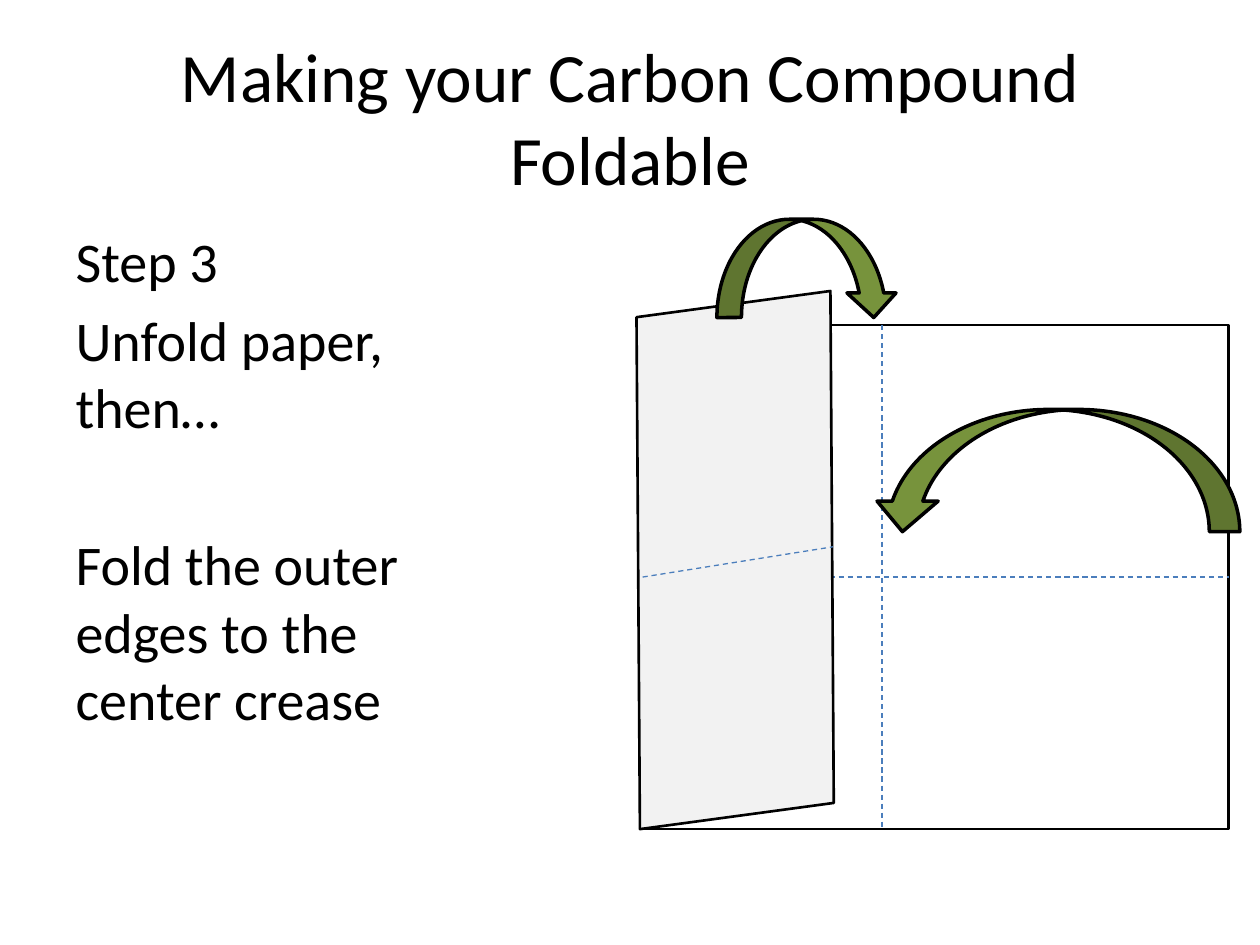
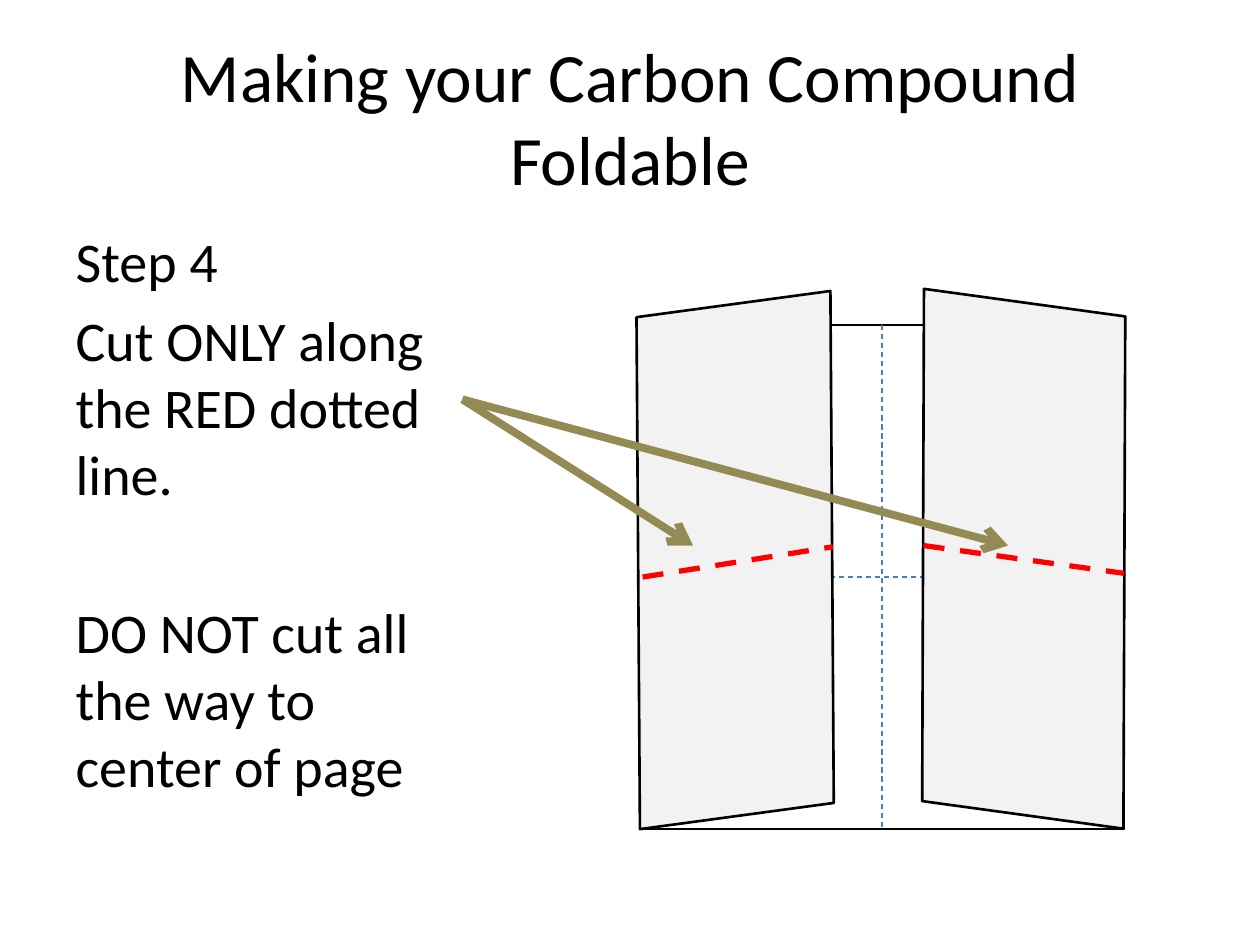
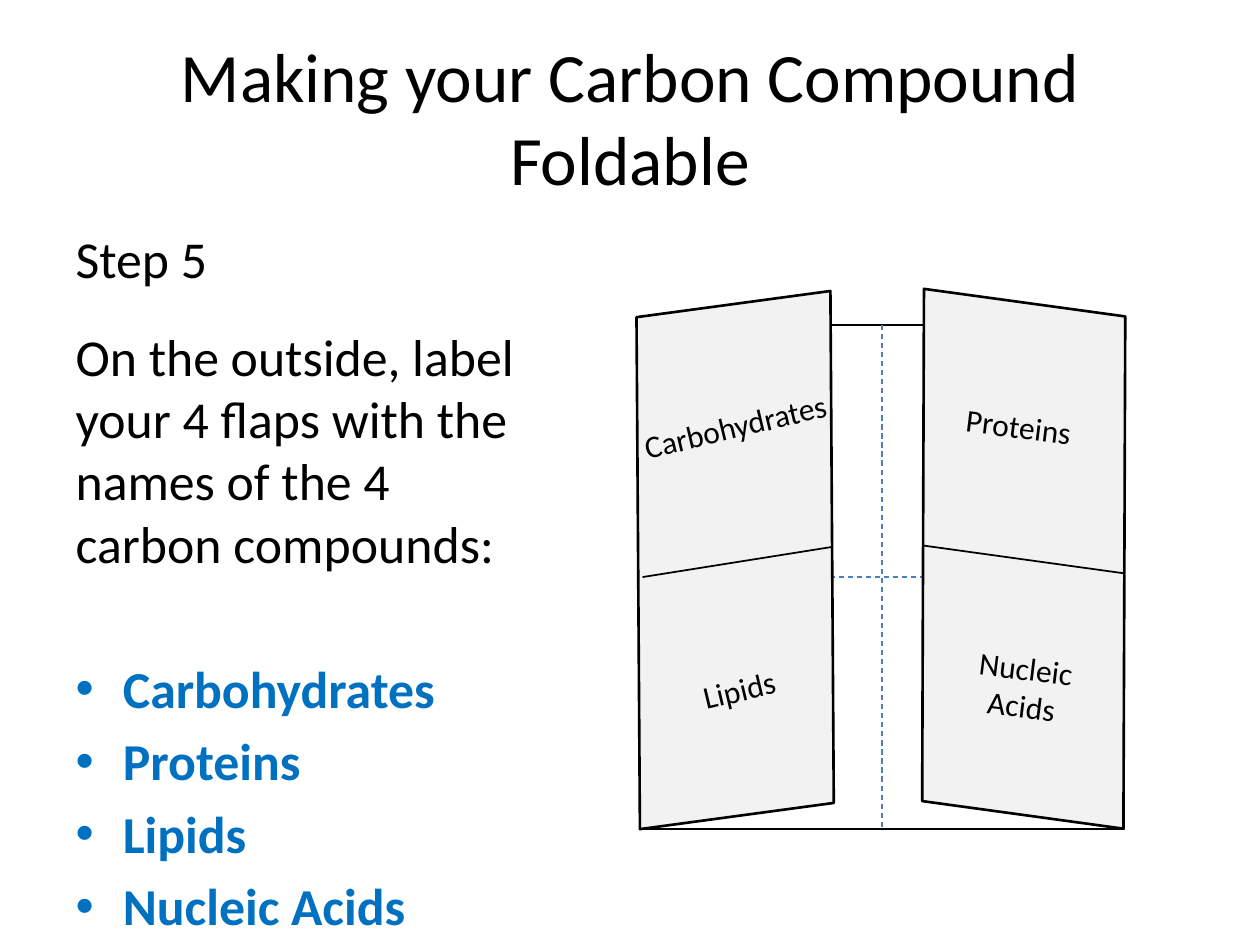
from pptx import Presentation
from pptx.dml.color import RGBColor
from pptx.enum.dml import MSO_LINE
from pptx.enum.shapes import MSO_CONNECTOR, MSO_SHAPE
from pptx.enum.text import MSO_ANCHOR, MSO_AUTO_SIZE, PP_ALIGN
from pptx.oxml.ns import qn
from pptx.util import Inches, Pt

DASH = MSO_LINE.DASH
STRAIGHT = MSO_CONNECTOR.STRAIGHT
RECTANGLE = MSO_SHAPE.RECTANGLE
PARALLELOGRAM = MSO_SHAPE.PARALLELOGRAM
CURVED_ARROW = MSO_SHAPE.CURVED_DOWN_ARROW
MIDDLE, TOP = MSO_ANCHOR.MIDDLE, MSO_ANCHOR.TOP
CENTER = PP_ALIGN.CENTER
NO_FIT, GROW = MSO_AUTO_SIZE.NONE, MSO_AUTO_SIZE.SHAPE_TO_FIT_TEXT

FONT = "Calibri"
TITLE = "Making your Carbon Compound Foldable"
COLORS = {
    "text": "000000", "compound": "0070C0", "outline": "000000",
    "flap": "F2F2F2", "crease": "4B7EBC", "cut": "FF0000",
    "fold": "77933C", "pointer": "948A54",
}

# Paper, as left, top, width, height
WIDE_PAPER = (5.08, 2.58, 4.67, 4)
FOLDED_PAPER = (5.08, 2.58, 3.84, 4)
CENTER_CREASE = 1.92

# Flaps relative to the paper: box, rotation, mirrored, line across the flap
LEFT_FLAP = ((-0.28, -0.15, 2.07, 4.03), -7.7, False, (0.02, 2, 1.53, 1.76))
RIGHT_FLAP = ((1.97, -0.16, 2.15, 4.03), 7.8, True, (2.25, 1.75, 3.84, 1.97))

# Flap labels relative to the paper: text, box, rotation
LABELS = [
    ("Carbohydrates", (-0.09, 0.6, 1.69, 0.4), -13.4),
    ("Lipids", (0.39, 2.69, 0.79, 0.4), -13.4),
    ("Proteins", (2.48, 0.6, 1.05, 0.4), 7),
    ("Nucleic\nAcids", (2.57, 2.52, 0.95, 0.71), 7),
]


def color(name):
    return RGBColor.from_string(COLORS[name])


def inches(values):
    return [Inches(value) for value in values]


def offset(box, origin):
    """Shift a box that is given relative to the origin."""
    return (origin[0] + box[0], origin[1] + box[1], *box[2:])


def style_font(paragraph, size, color_name="text", bold=None):
    font = paragraph.font
    font.name, font.size, font.bold = FONT, Pt(size), bold
    font.color.rgb = color(color_name)


def add_outlined(slide, kind, box, fill=None, width=1.5, rotation=0, mirrored=False):
    shape = slide.shapes.add_shape(kind, *inches(box))
    shape.shadow.inherit = False
    shape.rotation = rotation
    if fill:
        shape.fill.solid()
        shape.fill.fore_color.rgb = color(fill)
    else:
        shape.fill.background()
    shape.line.color.rgb = color("outline")
    shape.line.width = Pt(width)
    if mirrored:
        shape.element.spPr.find(qn("a:xfrm")).set("flipH", "1")


def add_line(slide, ends, color_name, width, dashed=False, arrow=False):
    connector = slide.shapes.add_connector(STRAIGHT, *inches(ends))
    line = connector.line
    line.color.rgb = color(color_name)
    line.width = Pt(width)
    if dashed:
        line.dash_style = DASH
    if arrow:
        outline = line._get_or_add_ln()
        outline.append(outline.makeelement(qn("a:tailEnd"), {"type": "arrow"}))
    properties = connector.element.spPr
    properties.append(properties.makeelement(qn("a:effectLst"), {}))


def place(placeholder, box, anchor):
    placeholder.left, placeholder.top, placeholder.width, placeholder.height = inches(box)
    frame = placeholder.text_frame
    frame.auto_size, frame.vertical_anchor = NO_FIT, anchor
    return frame


def write_steps(body, box, size, steps, compounds=(), compounds_gap=0):
    """Fill the body with (text, extra space before) steps, then bulleted compounds."""
    frame = place(body, box, TOP)
    frame.text = "\n".join([text for text, _ in steps] + list(compounds))
    paragraphs = frame.paragraphs
    for paragraph, (_, gap) in zip(paragraphs, steps):
        style_font(paragraph, size)
        properties = paragraph._p.get_or_add_pPr()
        properties.set("marL", "0")
        properties.set("indent", "0")
        if gap:
            paragraph.space_before = Pt(gap)
        properties.append(properties.makeelement(qn("a:buNone"), {}))
    for paragraph in paragraphs[len(steps):]:
        style_font(paragraph, size, "compound", bold=True)
    if compounds:
        paragraphs[len(steps)].space_before = Pt(compounds_gap)


def add_step_slide(deck):
    slide = deck.slides.add_slide(deck.slide_layouts[1])
    heading = place(slide.shapes.title, (0.5, 0.3, 9, 1.25), MIDDLE)
    heading.text = TITLE
    heading.paragraphs[0].alignment = CENTER
    style_font(heading.paragraphs[0], 39.6)
    return slide, slide.placeholders[1]


def draw_foldable(slide, paper, flaps, flap_line):
    """Draw the paper with its creases, and each flap with the line across it."""
    left, top, width, height = paper
    add_outlined(slide, RECTANGLE, paper)
    crease_x, crease_y = left + CENTER_CREASE, top + height / 2
    add_line(slide, (crease_x, top, crease_x, top + height), "crease", 0.75, dashed=True)
    add_line(slide, (left, crease_y, left + width, crease_y), "crease", 0.75, dashed=True)
    for box, rotation, mirrored, (x1, y1, x2, y2) in flaps:
        add_outlined(slide, PARALLELOGRAM, offset(box, paper), "flap",
                     rotation=rotation, mirrored=mirrored)
        add_line(slide, (left + x1, top + y1, left + x2, top + y2), *flap_line)


def label_flaps(slide, paper):
    for text, box, rotation in LABELS:
        label = slide.shapes.add_textbox(*inches(offset(box, paper)))
        label.rotation = rotation
        frame = label.text_frame
        frame.word_wrap, frame.auto_size = False, GROW
        frame.text = text
        for paragraph in frame.paragraphs:
            paragraph.alignment = CENTER
            style_font(paragraph, 18)


def build_fold_slide(deck):
    slide, body = add_step_slide(deck)
    write_steps(body, (0.5, 1.75, 3.33, 4.95), 32, [
        ("Step 3", 0),
        ("Unfold paper, then…", 0),
        ("Fold the outer edges to the center crease", 51.5),
    ])
    draw_foldable(slide, WIDE_PAPER, [LEFT_FLAP], ("crease", 0.75, True))
    # Both edges fold towards the center
    for box, mirrored in (((0.61, -0.84, 1.44, 0.78), False),
                          ((1.84, 0.67, 2.92, 0.97), True)):
        add_outlined(slide, CURVED_ARROW, offset(box, WIDE_PAPER), "fold", 2,
                     mirrored=mirrored)


def build_cut_slide(deck):
    slide, body = add_step_slide(deck)
    write_steps(body, (0.5, 1.75, 3.33, 4.95), 32, [
        ("Step 4", 0),
        ("Cut ONLY along the RED dotted line.", 0),
        ("DO NOT cut all the way to center of page", 51.5),
    ])
    draw_foldable(slide, FOLDED_PAPER, [LEFT_FLAP, RIGHT_FLAP], ("cut", 3, True))
    # Pointers from the instruction to both cuts
    for target_x in (5.5, 8):
        add_line(slide, (3.67, 3.17, target_x, 4.33), "pointer", 4.5, arrow=True)


def build_label_slide(deck):
    slide, body = add_step_slide(deck)
    write_steps(
        body, (0.5, 1.75, 3.75, 5.42), 29.6,
        [("Step 5", 0),
         ("On the outside, label your 4 flaps with the names of the 4 carbon compounds:", 20.5)],
        ["Carbohydrates", "Proteins", "Lipids", "Nucleic Acids"], 47.5)
    draw_foldable(slide, FOLDED_PAPER, [LEFT_FLAP, RIGHT_FLAP], ("outline", 1))
    label_flaps(slide, FOLDED_PAPER)


def main():
    deck = Presentation()
    deck.slide_width, deck.slide_height = Inches(10), Inches(7.5)
    build_fold_slide(deck)
    build_cut_slide(deck)
    build_label_slide(deck)
    deck.save("out.pptx")


if __name__ == "__main__":
    main()
